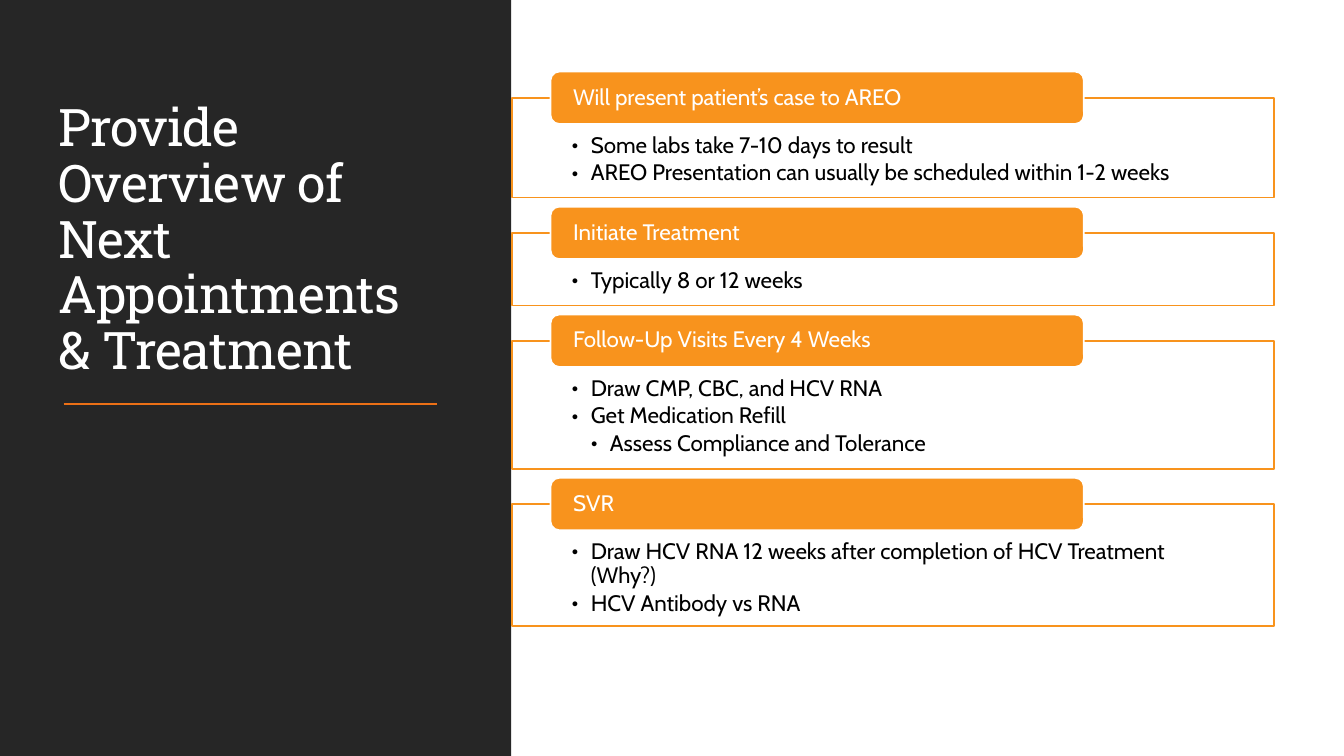
import pptx
import pptx.util
import pptx.dml.color
import pptx.enum.shapes
import pptx.enum.text
import pptx.oxml.ns
import lxml.etree

Inches, Pt = pptx.util.Inches, pptx.util.Pt
SHAPES = pptx.enum.shapes.MSO_SHAPE
ANCHOR = pptx.enum.text.MSO_ANCHOR
qn = pptx.oxml.ns.qn

COLORS = {"panel": "262626", "orange": "F8931D", "rule": "EC7016", "white": "FFFFFF", "black": "000000"}
HEADLINE = "Provide Overview of Next Appointments & Treatment"
STEPS = [
    ("Will present patient’s case to AREO", 0.99, [
        (1, "Some labs take 7-10 days to result"),
        (1, "AREO Presentation can usually be scheduled within 1-2 weeks"),
    ]),
    ("Initiate Treatment", 0.72, [(1, "Typically 8 or 12 weeks")]),
    ("Follow-Up Visits Every 4 Weeks", 1.27, [
        (1, "Draw CMP, CBC, and HCV RNA"),
        (1, "Get Medication Refill"),
        (2, "Assess Compliance and Tolerance"),
    ]),
    ("SVR", 1.21, [
        (1, "Draw HCV RNA 12 weeks after completion of HCV Treatment (Why?)"),
        (1, "HCV Antibody vs RNA"),
    ]),
]
STEP_LEFT, STEP_WIDTH, FIRST_TOP, STEP_GAP = 5.08, 7.56, 0.97, 0.35
TAB_LEFT, TAB_WIDTH, TAB_HEIGHT, TAB_RISE = 5.46, 5.29, 0.52, 0.26
INDENT = 0.19


def rgb(name):
    return pptx.dml.color.RGBColor.from_string(COLORS[name])


def add_block(slide, kind, place, fill, line=None):
    block = slide.shapes.add_shape(kind, *map(Inches, place))
    block.shadow.inherit = False
    block.fill.solid()
    block.fill.fore_color.rgb = rgb(fill)
    if line:
        block.line.color.rgb = rgb(line)
        block.line.width = Pt(1.25)
    else:
        block.line.fill.background()
    return block


def write(holder, lines, color, size=16, font="Cabin", anchor=ANCHOR.TOP,
          insets=(0.1, 0.05, 0.1, 0.05), after=0, spacing=None):
    frame = holder.text_frame
    frame.word_wrap = True
    frame.vertical_anchor = anchor
    frame.margin_left, frame.margin_top, frame.margin_right, frame.margin_bottom = map(Inches, insets)
    for index, (level, text) in enumerate(lines):
        paragraph = frame.paragraphs[0] if index == 0 else frame.add_paragraph()
        paragraph.alignment = pptx.enum.text.PP_ALIGN.LEFT
        paragraph.line_spacing = 0.9
        paragraph.space_after = Pt(after)
        if level:
            paragraph.level = level
            properties = paragraph._p.get_or_add_pPr()
            properties.set("marL", str(Inches(INDENT * level)))
            properties.set("indent", str(-Inches(INDENT)))
            lxml.etree.SubElement(properties, qn("a:buFont")).set("typeface", font)
            lxml.etree.SubElement(properties, qn("a:buChar")).set("char", "•")
        run = paragraph.add_run()
        run.text = text
        run.font.name = font
        run.font.size = Pt(size)
        run.font.color.rgb = rgb(color)
        if spacing:
            run._r.get_or_add_rPr().set("spc", str(spacing))


def main():
    deck = pptx.Presentation()
    deck.slide_width, deck.slide_height = Inches(13.33), Inches(7.5)
    slide = deck.slides.add_slide(deck.slide_layouts[6])

    add_block(slide, SHAPES.RECTANGLE, (0, 0, 5.07, 7.5), "panel")
    headline = slide.shapes.add_textbox(*map(Inches, (0.48, 0.7, 4, 3.13)))
    write(headline, [(0, HEADLINE)], "white", size=37, font="Roboto Slab",
          anchor=ANCHOR.BOTTOM, spacing=-50)

    rule = slide.shapes.add_connector(
        pptx.enum.shapes.MSO_CONNECTOR.STRAIGHT, *map(Inches, (0.63, 4.01, 4.33, 4.01)))
    rule.line.color.rgb = rgb("rule")
    rule.line.width = Pt(1.5)
    lxml.etree.SubElement(rule._element.spPr, qn("a:effectLst"))

    top = FIRST_TOP
    for heading, height, details in STEPS:
        box = add_block(slide, SHAPES.RECTANGLE, (STEP_LEFT, top, STEP_WIDTH, height), "white", "orange")
        write(box, details, "black", insets=(0.59, 0.36, 0.59, 0.12), after=2.4)
        tab = add_block(slide, SHAPES.ROUNDED_RECTANGLE,
                        (TAB_LEFT, top - TAB_RISE, TAB_WIDTH, TAB_HEIGHT), "orange", "white")
        write(tab, [(0, heading)], "white", anchor=ANCHOR.MIDDLE, insets=(0.2, 0, 0.2, 0))
        top += height + STEP_GAP

    deck.save("out.pptx")


if __name__ == "__main__":
    main()
